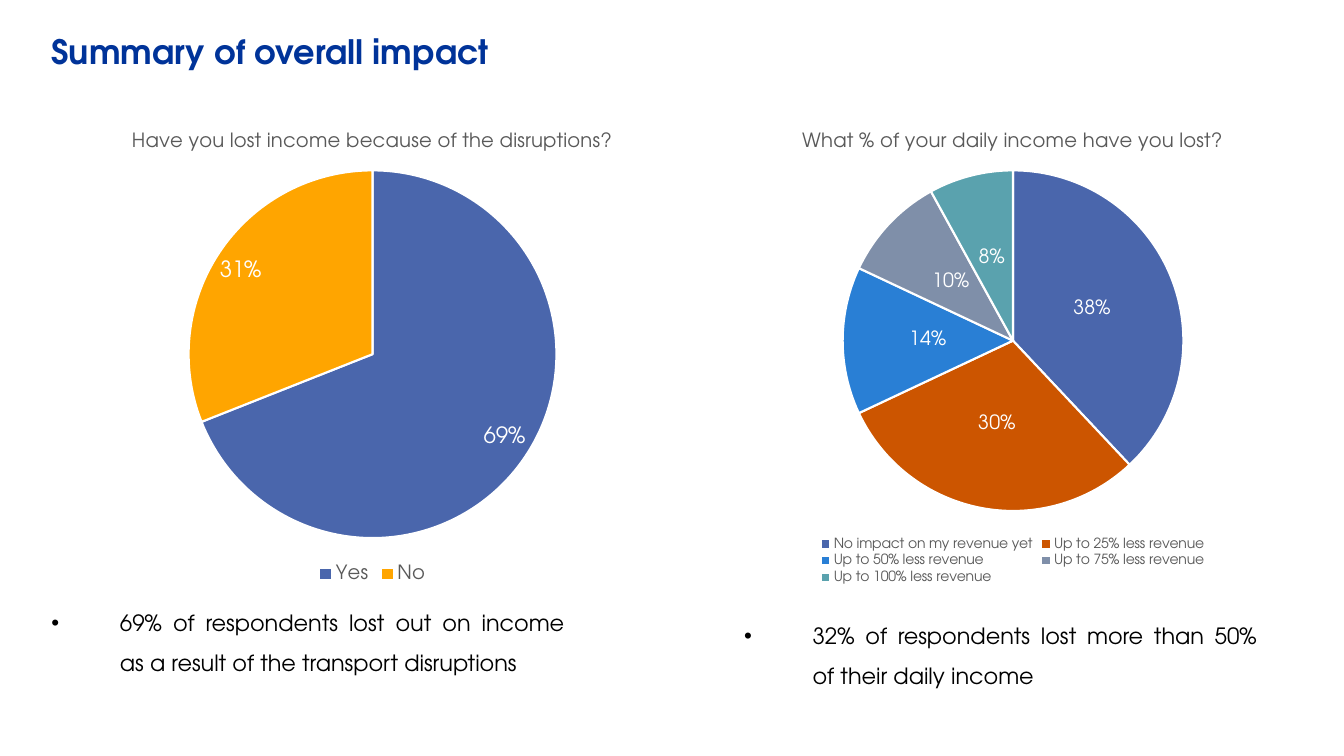
from dataclasses import dataclass

from lxml import etree
from pptx import Presentation
from pptx.chart.data import CategoryChartData
from pptx.dml.color import RGBColor
from pptx.enum.chart import XL_CHART_TYPE, XL_LABEL_POSITION, XL_LEGEND_POSITION
from pptx.enum.text import MSO_ANCHOR, PP_ALIGN
from pptx.oxml import parse_xml
from pptx.oxml.ns import nsdecls, qn
from pptx.util import Inches, Pt

PIE = XL_CHART_TYPE.PIE
BOTTOM = XL_LEGEND_POSITION.BOTTOM
CENTER = XL_LABEL_POSITION.CENTER
BEST_FIT = XL_LABEL_POSITION.BEST_FIT
LEFT, JUSTIFY = PP_ALIGN.LEFT, PP_ALIGN.JUSTIFY
MIDDLE = MSO_ANCHOR.MIDDLE
TITLE_ONLY = 5


@dataclass(frozen=True)
class Theme:
    font: str = "TeX Gyre Adventor"
    heading: str = "003399"
    body: str = "000000"
    muted: str = "595959"
    white: str = "FFFFFF"
    blue: str = "4A66AC"
    amber: str = "FFA500"
    rust: str = "CC5500"
    sky: str = "297FD5"
    slate: str = "7F8FA9"
    teal: str = "5AA2AE"
    heading_size: int = 24
    body_size: int = 16
    question_size: int = 14


THEME = Theme()
SLIDE_W, SLIDE_H = 13.33, 7.5
MARGIN = 0.43
INSET = 0.08
CHART_TOP, CHART_H = 1.11, 4.72
PIE_TOP = 0.58
FINDING_W, FINDING_H = 5.25, 1.5


def style_font(font, size, color, bold=False):
    font.name = THEME.font
    font.size = Pt(size)
    font.bold = bold
    font.color.rgb = RGBColor.from_string(color)


def set_insets(frame):
    frame.margin_left = frame.margin_right = Inches(INSET)
    frame.margin_top = frame.margin_bottom = Inches(INSET)


def add_heading(slide, text):
    heading = slide.shapes.title
    heading.left, heading.top = Inches(MARGIN), Inches(0.2)
    heading.width, heading.height = Inches(12.54), Inches(0.61)
    frame = heading.text_frame
    frame.text = text
    frame.vertical_anchor = MIDDLE
    set_insets(frame)
    paragraph = frame.paragraphs[0]
    paragraph.alignment = LEFT
    style_font(paragraph.font, THEME.heading_size, THEME.heading, bold=True)


def place_pie(chart, chart_width, diameter):
    """Centre the pie across the chart, a fixed distance below its top."""
    shares = {
        "x": (chart_width - diameter) / 2 / chart_width,
        "y": PIE_TOP / CHART_H,
        "w": diameter / chart_width,
        "h": diameter / CHART_H,
    }
    sizes = "".join(f'<c:{side} val="{share:.3f}"/>' for side, share in shares.items())
    layout = parse_xml(
        f'<c:layout {nsdecls("c")}><c:manualLayout><c:layoutTarget val="inner"/>'
        f'<c:xMode val="edge"/><c:yMode val="edge"/>{sizes}</c:manualLayout></c:layout>'
    )
    plot_area = chart.plots[0]._element.getparent()
    for automatic in plot_area.findall(qn("c:layout")):
        plot_area.remove(automatic)
    plot_area.insert(0, layout)


def add_survey_pie(slide, left, width, diameter, question, answers,
                   legend_size, label_size, label_position):
    """Draw a pie from answers given as (name, share, colour)."""
    data = CategoryChartData(number_format="0%")
    data.categories = [name for name, _, _ in answers]
    data.add_series("Series 1", [share for _, share, _ in answers])
    chart = slide.shapes.add_chart(
        PIE, Inches(left), Inches(CHART_TOP), Inches(width), Inches(CHART_H), data
    ).chart
    style_font(chart.font, 10, THEME.body)

    chart.has_title = True
    chart.chart_title.include_in_layout = False
    chart.chart_title.text_frame.text = question
    style_font(chart.chart_title.text_frame.paragraphs[0].font,
               THEME.question_size, THEME.muted)

    chart.has_legend = True
    chart.legend.position = BOTTOM
    chart.legend.include_in_layout = False
    style_font(chart.legend.font, legend_size, THEME.muted)

    plot = chart.plots[0]
    plot.vary_by_categories = True
    series = plot.series[0]
    for index, (_, _, color) in enumerate(answers):
        slice_format = series.points[index].format
        slice_format.fill.solid()
        slice_format.fill.fore_color.rgb = RGBColor.from_string(color)
        slice_format.line.color.rgb = RGBColor.from_string(THEME.white)
        slice_format.line.width = Pt(1.5)

    labels = series.data_labels
    labels.show_value = True
    labels.show_percentage = False
    labels.number_format = "0%"
    labels.number_format_is_linked = False
    labels.position = label_position
    style_font(labels.font, label_size, THEME.white)
    place_pie(chart, width, diameter)


def add_finding(slide, left, top, text):
    box = slide.shapes.add_textbox(Inches(left), Inches(top),
                                   Inches(FINDING_W), Inches(FINDING_H))
    frame = box.text_frame
    frame.word_wrap = True
    set_insets(frame)
    paragraph = frame.paragraphs[0]
    paragraph.text = text
    paragraph.alignment = JUSTIFY
    paragraph.line_spacing = 1.5
    properties = paragraph._p.get_or_add_pPr()
    properties.set("marL", str(Inches(0.68)))
    properties.set("indent", str(Inches(-0.73)))
    etree.SubElement(properties, qn("a:buFont"), typeface="Arial")
    etree.SubElement(properties, qn("a:buChar"), char="•")
    style_font(paragraph.font, THEME.body_size, THEME.body)


def main():
    deck = Presentation()
    deck.slide_width, deck.slide_height = Inches(SLIDE_W), Inches(SLIDE_H)
    slide = deck.slides.add_slide(deck.slide_layouts[TITLE_ONLY])
    add_heading(slide, "Summary of overall impact")

    lost_income = [("Yes", 0.69, THEME.blue), ("No", 0.31, THEME.amber)]
    income_share = [
        ("No impact on my revenue yet", 0.38, THEME.blue),
        ("Up to 25% less revenue", 0.30, THEME.rust),
        ("Up to 50% less revenue", 0.14, THEME.sky),
        ("Up to 75% less revenue", 0.10, THEME.slate),
        ("Up to 100% less revenue", 0.08, THEME.teal),
    ]
    add_survey_pie(slide, 6.93, 6.23, 3.38,
                   "What % of your daily income have you lost?", income_share,
                   legend_size=10, label_size=14, label_position=CENTER)
    add_survey_pie(slide, 0.24, 6.91, 3.65,
                   "Have you lost income because of the disruptions?", lost_income,
                   legend_size=14, label_size=16, label_position=BEST_FIT)

    add_finding(slide, MARGIN, CHART_TOP + CHART_H,
                "69% of respondents lost out on income as a result of the transport disruptions")
    add_finding(slide, 7.3, 5.96,
                "32% of respondents lost more than 50% of their daily income")
    deck.save("out.pptx")


if __name__ == "__main__":
    main()
